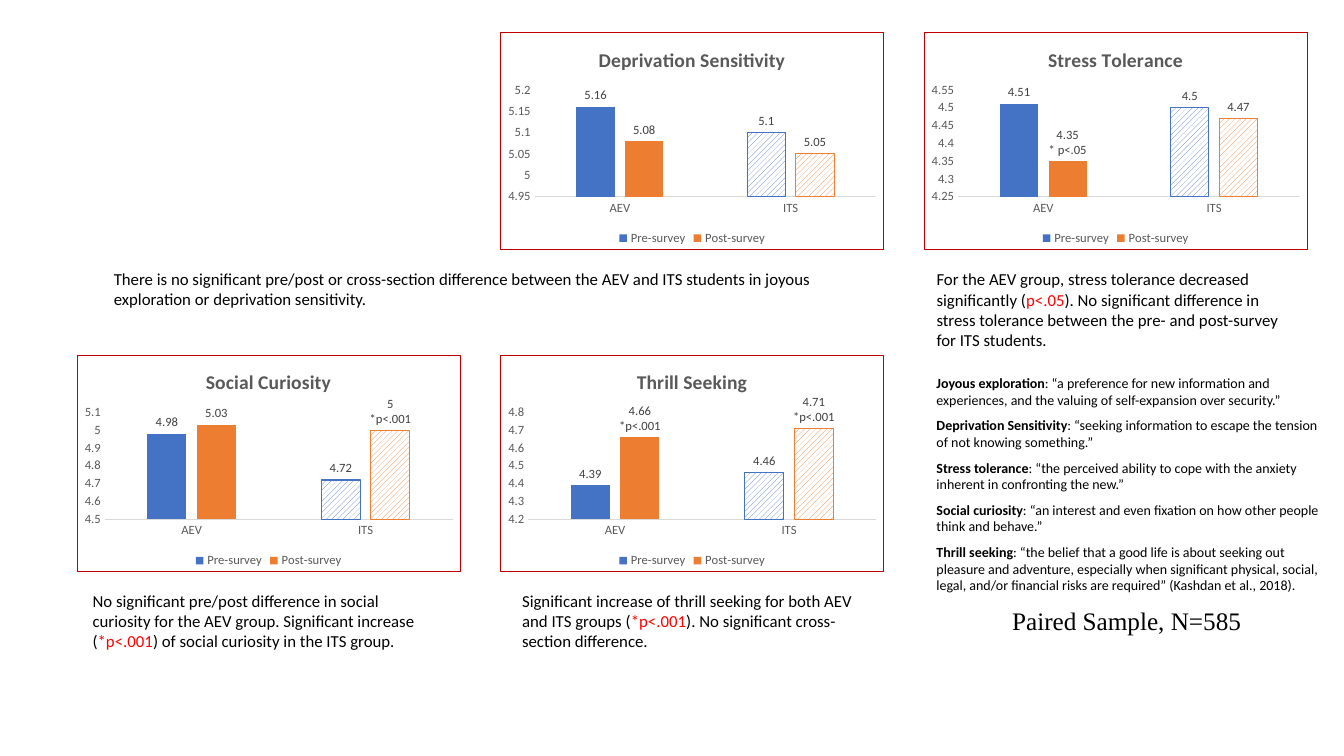
from lxml import etree
from pptx import Presentation
from pptx.chart.data import CategoryChartData
from pptx.dml.color import RGBColor
from pptx.enum.chart import XL_CHART_TYPE, XL_LABEL_POSITION, XL_LEGEND_POSITION, XL_TICK_MARK
from pptx.enum.dml import MSO_PATTERN
from pptx.enum.text import MSO_AUTO_SIZE
from pptx.oxml import parse_xml
from pptx.oxml.ns import nsdecls
from pptx.util import Inches, Pt

CLUSTER = XL_CHART_TYPE.COLUMN_CLUSTERED
OUTSIDE = XL_LABEL_POSITION.OUTSIDE_END
BOTTOM = XL_LEGEND_POSITION.BOTTOM
NO_TICK = XL_TICK_MARK.NONE
HATCH = MSO_PATTERN.WIDE_UPWARD_DIAGONAL
GROW = MSO_AUTO_SIZE.SHAPE_TO_FIT_TEXT

SANS, SERIF = "Calibri", "Times New Roman"
BLACK, WHITE, RED, FRAME = "000000", "FFFFFF", "FF0000", "C00000"
GREY, DARK, PALE = "595959", "404040", "D9D9D9"
COLORS = {"Pre-survey": "4472C4", "Post-survey": "ED7D31"}

LEFT, TOP, STEP_X, STEP_Y = 0.76, 0.32, 4.2, 3.2
WIDE, HIGH = 3.81, 2.16

# column, row, title, axis (low, high, step), pre values, post values, notes by group
CHARTS = [
    (0, 1, "Social Curiosity", (4.5, 5.1, 0.1), (4.98, 4.72), (5.03, 5),
     {1: ("5", "*p<.001")}),
    (1, 1, "Thrill Seeking", (4.2, 4.8, 0.1), (4.39, 4.46), (4.66, 4.71),
     {0: ("4.66", "*p<.001"), 1: ("4.71", "*p<.001")}),
    (2, 0, "Stress Tolerance", (4.25, 4.55, 0.05), (4.51, 4.5), (4.35, 4.47),
     {0: ("4.35", "* p<.05")}),
    (1, 0, "Deprivation Sensitivity", (4.95, 5.2, 0.05), (5.16, 5.1), (5.08, 5.05), {}),
]

FINDINGS = [
    ((1.03, 2.62, 7.51, 0.5),
     "There is no significant pre/post or cross-section difference between the AEV and ITS "
     "students in joyous exploration or deprivation sensitivity."),
    ((9.19, 2.62, 3.81, 0.91),
     "For the AEV group, stress tolerance decreased significantly (|p<.05|). No significant "
     "difference in stress tolerance between the pre- and post-survey for ITS students."),
    ((0.82, 5.81, 3.6, 0.71),
     "No significant pre/post difference in social curiosity for the AEV group. Significant "
     "increase (|*p<.001|) of social curiosity in the ITS group."),
    ((5.08, 5.81, 3.6, 0.71),
     "Significant increase of thrill seeking for both AEV and ITS groups (|*p<.001|). "
     "No significant cross-section difference."),
]

TERMS = [
    ("Joyous exploration", "“a preference for new information and experiences, and the "
     "valuing of self-expansion over security.”"),
    ("Deprivation Sensitivity", "“seeking information to escape the tension of not knowing "
     "something.”"),
    ("Stress tolerance", "“the perceived ability to cope with the anxiety inherent in "
     "confronting the new.”"),
    ("Social curiosity", "“an interest and even fixation on how other people think and "
     "behave.”"),
    ("Thrill seeking", "“the belief that a good life is about seeking out pleasure and "
     "adventure, especially when significant physical, social, legal, and/or financial risks "
     "are required” (Kashdan et al., 2018)."),
]


def rgb(code):
    """Turn a hex string into a colour."""
    return RGBColor.from_string(code)


def style(font, size, color=BLACK, name=SANS):
    """Set the size, colour and face of a font."""
    font.size, font.name = Pt(size), name
    font.color.rgb = rgb(color)


def add_box(slide, box, wrap=True):
    """Add a text box that grows with its text and return its frame."""
    frame = slide.shapes.add_textbox(*map(Inches, box)).text_frame
    frame.word_wrap, frame.auto_size = wrap, GROW
    return frame


def add_finding(slide, box, text):
    """Write a finding, with the parts between bars in red."""
    para = add_box(slide, box).paragraphs[0]
    para.font.size, para.font.name = Pt(12), SANS
    for i, part in enumerate(text.split("|")):
        run = para.add_run()
        run.text = part
        run.font.color.rgb = rgb(RED if i % 2 else BLACK)


def add_terms(slide, box):
    """List the terms in bold with their meanings."""
    frame = add_box(slide, box)
    for i, (term, meaning) in enumerate(TERMS):
        para = frame.add_paragraph() if i else frame.paragraphs[0]
        para.space_after = Pt(6)
        style(para.font, 10)
        head = para.add_run()
        head.text, head.font.bold = term, True
        para.add_run().text = ": " + meaning


def add_sample(slide, box):
    """Write the size of the sample."""
    para = add_box(slide, box, wrap=False).paragraphs[0]
    para.text = "Paired Sample, N=585"
    style(para.font, 18, name=SERIF)


def frame_chart(chart):
    """Give the chart a white ground and a thin red border."""
    area = parse_xml(
        f'<c:spPr {nsdecls("c", "a")}>'
        f'<a:solidFill><a:srgbClr val="{WHITE}"/></a:solidFill>'
        f'<a:ln w="{Pt(0.75)}"><a:solidFill><a:srgbClr val="{FRAME}"/></a:solidFill></a:ln>'
        '</c:spPr>')
    chart.element.chart.addnext(area)


def set_axes(chart, scale):
    """Scale the value axis and format both axes."""
    value, group = chart.value_axis, chart.category_axis
    value.minimum_scale, value.maximum_scale, value.major_unit = scale
    value.has_major_gridlines = False
    value.format.line.fill.background()
    group.format.line.color.rgb = rgb(PALE)
    group.format.line.width = Pt(0.75)
    for axis in (value, group):
        axis.major_tick_mark = axis.minor_tick_mark = NO_TICK
        style(axis.tick_labels.font, 9, GREY)


def paint(series):
    """Fill the AEV column, hatch the ITS column and label both."""
    color = rgb(COLORS[series.name])
    series.invert_if_negative = False
    series.format.fill.solid()
    series.format.fill.fore_color.rgb = color
    its = series.points[1].format
    its.fill.patterned()
    its.fill.pattern = HATCH
    its.fill.fore_color.rgb, its.fill.back_color.rgb = color, rgb(WHITE)
    its.line.color.rgb, its.line.width = color, Pt(0.75)
    labels = series.data_labels
    labels.show_value, labels.position = True, OUTSIDE
    style(labels.font, 9, DARK)


def add_note(point, value, note):
    """Label a column with its value over a red significance note."""
    label = point.data_label
    frame = label.text_frame
    first, second = frame.paragraphs[0], frame.add_paragraph()
    first.text, second.text = value, note
    style(first.font, 9, DARK)
    style(second.font, 9, RED)
    second.font.bold = True
    label.position = OUTSIDE


def add_survey(slide, box, title, scale, pre, post, notes):
    """Add one chart of the scores before and after the survey."""
    data = CategoryChartData()
    data.categories = ["AEV", "ITS"]
    for name, scores in zip(COLORS, (pre, post)):
        data.add_series(name, scores)
    chart = slide.shapes.add_chart(CLUSTER, *map(Inches, box), data).chart
    style(chart.font, 10)
    frame_chart(chart)
    head = chart.chart_title
    head.text_frame.text = title
    head.include_in_layout = False
    style(head.text_frame.paragraphs[0].font, 14, GREY)
    chart.has_legend = True
    chart.legend.position, chart.legend.include_in_layout = BOTTOM, False
    style(chart.legend.font, 9, GREY)
    set_axes(chart, scale)
    plot = chart.plots[0]
    plot.gap_width, plot.overlap, plot.vary_by_categories = 219, -27, False
    for series in plot.series:
        paint(series)
    for i, lines in notes.items():
        add_note(plot.series[1].points[i], *lines)


def main():
    """Build the slide and save it."""
    deck = Presentation()
    deck.slide_width, deck.slide_height = Inches(13.33), Inches(7.5)
    slide = deck.slides.add_slide(deck.slide_layouts[6])
    for col, row, *parts in CHARTS:
        add_survey(slide, (LEFT + col * STEP_X, TOP + row * STEP_Y, WIDE, HIGH), *parts)
    for box, text in FINDINGS:
        add_finding(slide, box, text)
    add_terms(slide, (9.19, 3.67, 4, 2.29))
    add_sample(slide, (9.94, 5.96, 2.5, 0.4))
    deck.save("out.pptx")


if __name__ == "__main__":
    main()
